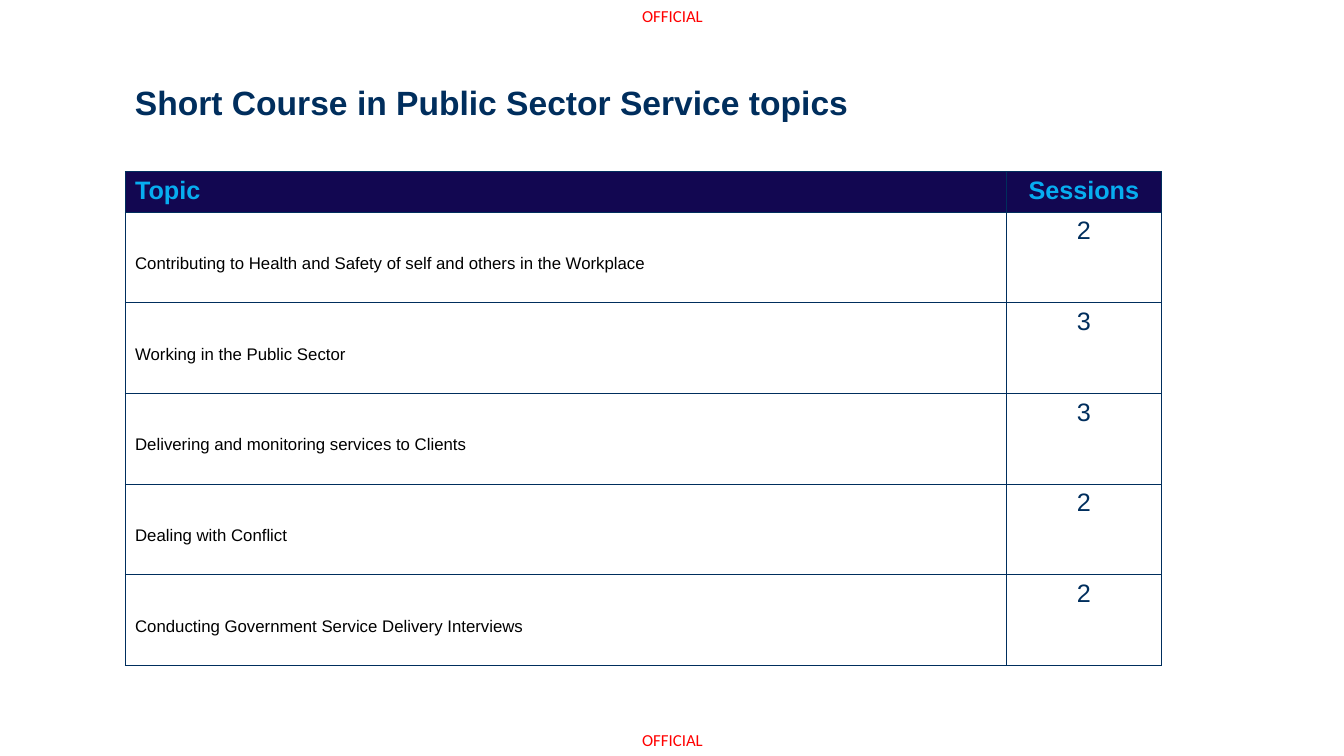
from lxml.etree import SubElement
from pptx import Presentation
from pptx.dml.color import RGBColor
from pptx.enum.text import MSO_ANCHOR, PP_ALIGN
from pptx.oxml import parse_xml
from pptx.oxml.ns import nsdecls, qn
from pptx.util import Inches, Pt

NAVY, RED, BLACK = "002E5D", "FF0000", "000000"
HEADER_FILL, HEADER_TEXT = "120751", "07ADF0"
TOPICS = [
    ("Contributing to Health and Safety of self and others in the Workplace", 2),
    ("Working in the Public Sector", 3),
    ("Delivering and monitoring services to Clients", 3),
    ("Dealing with Conflict", 2),
    ("Conducting Government Service Delivery Interviews", 2),
]


def rgb(value):
    return RGBColor.from_string(value)


def apply(target, values):
    for name, value in values.items():
        setattr(target, name, value)


class Deck:
    font = "Arial"

    def __init__(self):
        self.prs = Presentation()
        apply(self.prs, {"slide_width": Inches(13.33), "slide_height": Inches(7.5)})
        self.s = self.prs.slides.add_slide(self.prs.slide_layouts[6])

    def paragraph(self, tf, text, size, color, bold=False, font=None, **layout):
        p = tf.paragraphs[0]
        apply(p, layout)
        r = p.add_run()
        r.text = text
        apply(r.font, {"name": font or self.font, "size": Pt(size), "bold": bold})
        r.font.color.rgb = rgb(color)

    def text(self, box, text, size, color, frame, **style):
        tf = self.s.shapes.add_textbox(*map(Inches, box)).text_frame
        apply(tf, {"word_wrap": True, "vertical_anchor": MSO_ANCHOR.MIDDLE, **frame})
        self.paragraph(tf, text, size, color, **style)

    def borders(self, cell, color, width):
        tcPr = cell._tc.get_or_add_tcPr()
        for i, side in enumerate("LRTB"):
            ln = parse_xml(f'<a:ln{side} {nsdecls("a")} w="{Pt(width)}"/>')
            fill = SubElement(ln, qn("a:solidFill"))
            SubElement(fill, qn("a:srgbClr"), val=color)
            tcPr.insert(i, ln)

    def cell(self, cell, text, size, color, fill=None, frame=None, **style):
        apply(cell, frame or {})
        self.paragraph(cell.text_frame, text, size, color, **style)
        if fill:
            cell.fill.solid()
            cell.fill.fore_color.rgb = rgb(fill)
        else:
            cell.fill.background()
        self.borders(cell, NAVY, 0.25)

    def table(self, box, widths, heights):
        shape = self.s.shapes.add_table(len(heights), len(widths), *map(Inches, box))
        table = shape.table
        apply(table, {"first_row": False, "horz_banding": False})
        for column, width in zip(table.columns, widths):
            column.width = Inches(width)
        for row, height in zip(table.rows, heights):
            row.height = Inches(height)
        return table


def main():
    deck = Deck()
    center = {"alignment": PP_ALIGN.CENTER}
    no_margins = {f"margin_{side}": 0 for side in ("left", "right", "top", "bottom")}
    for top in (0, 7.18):
        deck.text((6.2, top, 0.94, 0.32), "OFFICIAL", 12, RED, no_margins,
                  font="Calibri", **center)
    deck.text((1.24, 0.72, 9.17, 0.63), "Short Course in Public Sector Service topics",
              24, NAVY, {}, bold=True, line_spacing=0.9)

    table = deck.table((1.24, 1.7, 10.28, 4.9), (8.74, 1.54), [0.4] + [0.9] * len(TOPICS))
    header = {"size": 18, "color": HEADER_TEXT, "fill": HEADER_FILL, "bold": True}
    deck.cell(table.cell(0, 0), "Topic", **header)
    deck.cell(table.cell(0, 1), "Sessions", **header, **center)
    topic_frame = {"vertical_anchor": MSO_ANCHOR.MIDDLE, "margin_top": Inches(0.18)}
    for row, (topic, sessions) in enumerate(TOPICS, 1):
        deck.cell(table.cell(row, 0), topic, 12, BLACK, frame=topic_frame)
        deck.cell(table.cell(row, 1), str(sessions), 18, NAVY, **center)
    deck.prs.save("out.pptx")


if __name__ == "__main__":
    main()
